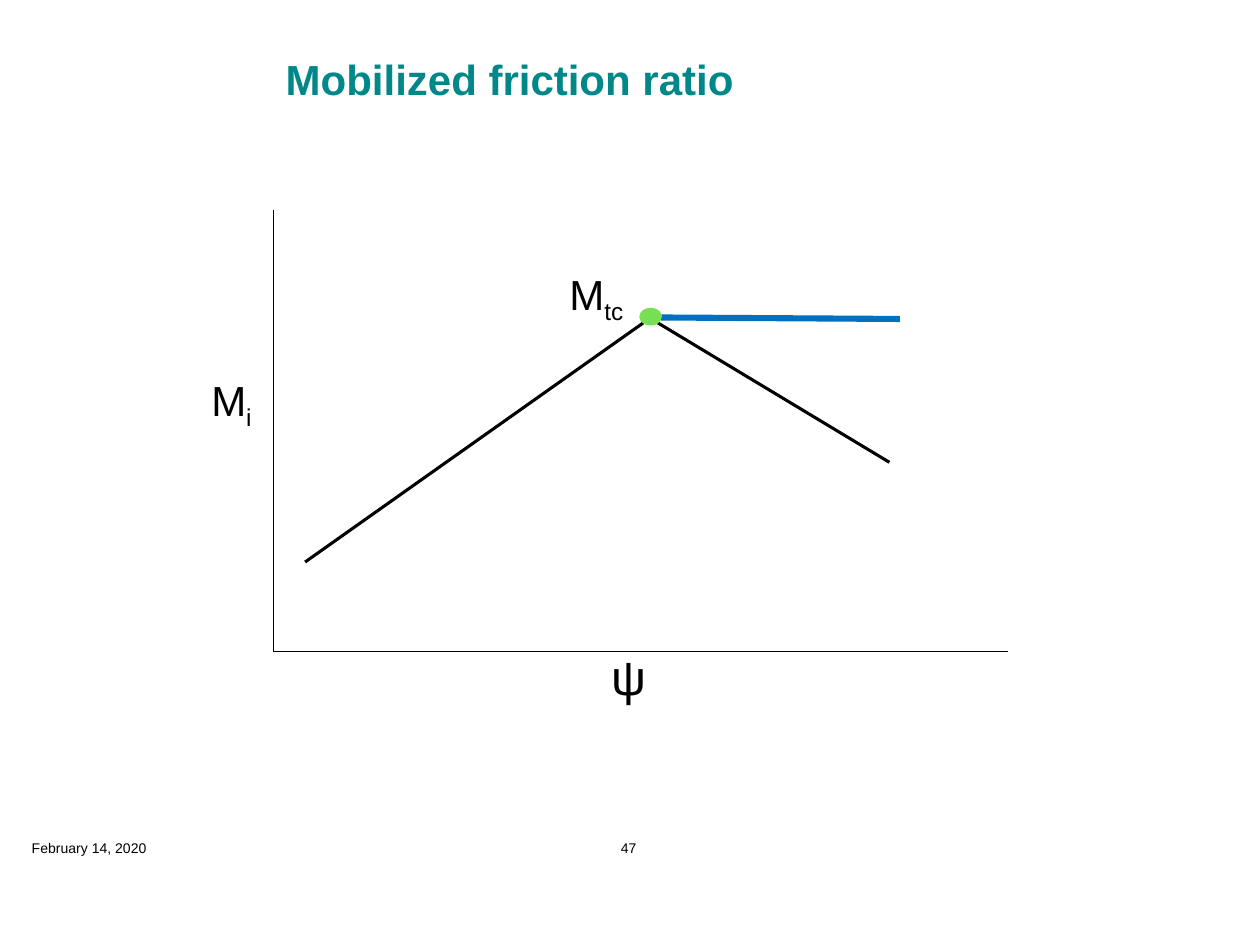
from dataclasses import dataclass

import pptx
import pptx.dml.color
import pptx.enum.shapes
import pptx.enum.text
import pptx.util
from lxml import etree

Cm = pptx.util.Cm
Pt = pptx.util.Pt
RGB = pptx.dml.color.RGBColor
Anchor = pptx.enum.text.MSO_ANCHOR
Align = pptx.enum.text.PP_ALIGN

BLACK = RGB(0x00, 0x00, 0x00)
TEAL = RGB(0x00, 0x87, 0x89)
GREEN = RGB(0x77, 0xDF, 0x54)
BLUE = RGB(0x00, 0x70, 0xC0)


@dataclass
class Label:
    text: str
    left: float
    top: float
    width: float
    height: float
    size: int
    sub: str = ""
    color: RGB = BLACK
    bold: bool = False
    inset: bool = True
    wrap: bool = True
    anchor: Anchor = Anchor.TOP
    align: Align = Align.LEFT


@dataclass
class Line:
    x1: float
    y1: float
    x2: float
    y2: float
    width: float
    color: RGB = BLACK


def add_label(slide, item: Label) -> None:
    box = slide.shapes.add_textbox(
        Cm(item.left), Cm(item.top), Cm(item.width), Cm(item.height))
    frame = box.text_frame
    frame.word_wrap = item.wrap
    frame.vertical_anchor = item.anchor
    if not item.inset:
        frame.margin_left = frame.margin_right = 0
        frame.margin_top = frame.margin_bottom = 0
    para = frame.paragraphs[0]
    para.alignment = item.align
    for text, base in ((item.text, None), (item.sub, "-25000")):
        if not text:
            continue
        run = para.add_run()
        run.text = text
        run.font.name = "Arial"
        run.font.size = Pt(item.size)
        run.font.bold = item.bold
        run.font.color.rgb = item.color
        if base:
            run.font._element.set("baseline", base)


def add_line(slide, item: Line) -> None:
    line = slide.shapes.add_connector(
        pptx.enum.shapes.MSO_CONNECTOR.STRAIGHT,
        Cm(item.x1), Cm(item.y1), Cm(item.x2), Cm(item.y2))
    line.line.color.rgb = item.color
    line.line.width = Pt(item.width)
    etree.SubElement(line._element.spPr, pptx.oxml.ns.qn("a:effectLst"))


def add_dot(slide, left: float, top: float, width: float, height: float) -> None:
    dot = slide.shapes.add_shape(
        pptx.enum.shapes.MSO_SHAPE.OVAL,
        Cm(left), Cm(top), Cm(width), Cm(height))
    dot.shadow.inherit = False
    dot.fill.solid()
    dot.fill.fore_color.rgb = GREEN
    dot.line.color.rgb = GREEN
    dot.line.width = Pt(0.75)


# Axes meet at the origin
LEFT, BASE = 5.51, 13.13
AXES = [
    Line(LEFT, 4.24, LEFT, BASE, 0.75),
    Line(20.32, BASE, LEFT, BASE, 0.75),
]

# Branches that run out from the peak
CURVES = [
    Line(13.13, 6.43, 17.93, 9.32, 1.75),
    Line(12.98, 6.5, 6.15, 11.33, 1.75),
    Line(13.33, 6.4, 18.14, 6.43, 3.5, BLUE),
]

FOOT = 16.92
LABELS = [
    Label("Mobilized friction ratio", LEFT, 0.64, 19.25, 1.91, 24,
          color=TEAL, bold=True, anchor=Anchor.MIDDLE),
    Label("ψ", 12.07, 12.9, 3.38, 1.45, 28),
    Label("M", 4.01, 7.42, 1.7, 1.27, 24, sub="i"),
    Label("M", 11.23, 5.28, 1.68, 1.27, 24, sub="tc", wrap=False),
    Label("February 14, 2020", 0.64, FOOT, 5.92, 0.36, 8, inset=False),
    Label("47", 11.71, FOOT, 1.93, 0.36, 8, inset=False, align=Align.CENTER),
]


def main() -> None:
    deck = pptx.Presentation()
    deck.slide_width, deck.slide_height = Cm(25.4), Cm(19.05)
    slide = deck.slides.add_slide(deck.slide_layouts[6])

    # Plot
    for item in AXES + CURVES:
        add_line(slide, item)
    add_dot(slide, 12.9, 6.22, 0.43, 0.33)

    # Title, plot labels and footer
    for item in LABELS:
        add_label(slide, item)

    deck.save("out.pptx")


if __name__ == "__main__":
    main()
